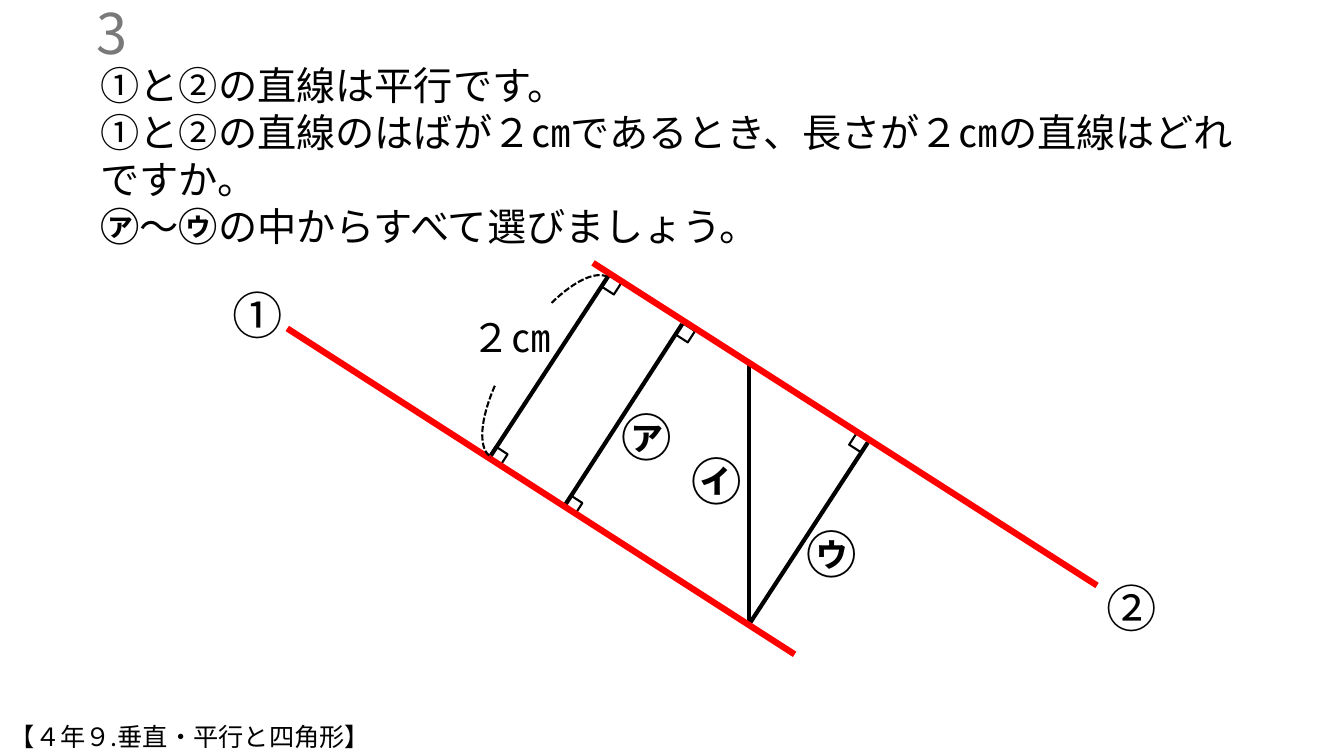
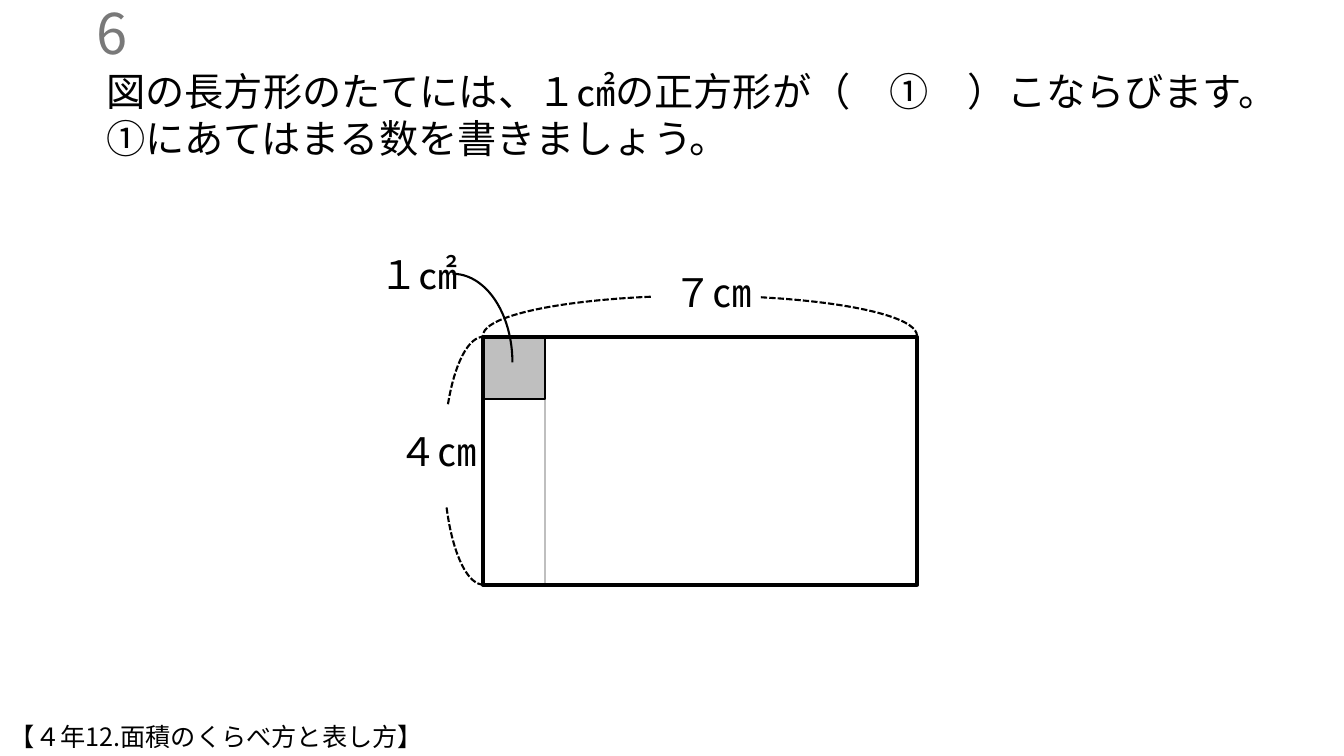
from itertools import groupby
from math import cos, radians, sin

from lxml import etree
from pptx import Presentation
from pptx.dml.color import RGBColor
from pptx.enum.dml import MSO_LINE
from pptx.enum.shapes import MSO_CONNECTOR, MSO_SHAPE
from pptx.enum.text import MSO_ANCHOR, PP_ALIGN
from pptx.oxml.ns import qn
from pptx.util import Inches, Pt

COLUMNS, ROWS = 160, 90
POINTS_PER_CELL = 6


def color(hex_text):
    return RGBColor.from_string(hex_text)


class Worksheet:
    """Draws on the current slide; lengths are cells of a 160 by 90 grid."""

    FONT = "Noto Sans CJK JP"
    BLACK, GRAY, RED, WHITE = "000000", "797979", "FF0000", "FFFFFF"
    LIGHT_GRAY = "BFBFBF"
    THIN, MEDIUM, THICK = 1.5, 3, 4.5
    BOLD_LETTERS = "㋐㋑㋒"
    LINE_HEIGHT = 1.2

    def __init__(self):
        self.presentation = Presentation()
        self.presentation.slide_width = Inches(13.33)
        self.presentation.slide_height = Inches(7.5)
        self.slide = None

    def column(self, count):
        return round(self.presentation.slide_width * count / COLUMNS)

    def row(self, count):
        return round(self.presentation.slide_height * count / ROWS)

    def box(self, left, top, width, height):
        return self.column(left), self.row(top), self.column(width), self.row(height)

    def new_slide(self, number, unit):
        self.slide = self.presentation.slides.add_slide(self.presentation.slide_layouts[6])
        self.text(number, 0, 1.2, 16.4, height=4.8, size=40, hex_text=self.GRAY,
                  align=PP_ALIGN.RIGHT, anchor=MSO_ANCHOR.MIDDLE)
        self.text(unit, 0, 85.15, 90, height=4.8, size=18)

    def text(self, text, left, top, width, height=7, size=28, hex_text=BLACK,
             align=PP_ALIGN.LEFT, anchor=MSO_ANCHOR.TOP):
        shape = self.slide.shapes.add_textbox(*self.box(left, top, width, height))
        frame = shape.text_frame
        frame.word_wrap = True
        frame.vertical_anchor = anchor
        frame.margin_top = Inches(0.05) + Pt(size * 0.06)
        for index, line in enumerate(text.split("\n")):
            paragraph = frame.paragraphs[0] if index == 0 else frame.add_paragraph()
            paragraph.alignment = align
            paragraph.line_spacing = Pt(size * self.LINE_HEIGHT)
            for bold, letters in groupby(line, key=lambda letter: letter in self.BOLD_LETTERS):
                run = paragraph.add_run()
                run.text = "".join(letters)
                run.font.size = Pt(size)
                run.font.bold = bold
                run.font.color.rgb = color(hex_text)
                run.font.name = self.FONT
                properties = run.font._element
                etree.SubElement(properties, qn("a:ea"), typeface=self.FONT)

    def question(self, text, left, top, width, height):
        self.text(text, left, top, width, height=height)

    def mark(self, letter, left, top):
        """Add a large circled number or letter."""
        self.text(letter, left, top, 8, height=8.5, size=36)

    def measure(self, text, left, top):
        self.text(text, left, top, 14.2)

    def line(self, start, end, hex_text=BLACK, weight=MEDIUM):
        connector = self.slide.shapes.add_connector(
            MSO_CONNECTOR.STRAIGHT, self.column(start[0]), self.row(start[1]),
            self.column(end[0]), self.row(end[1]))
        connector.line.color.rgb = color(hex_text)
        connector.line.width = Pt(weight)
        etree.SubElement(connector._element.spPr, qn("a:effectLst"))

    def shape(self, kind, left, top, width, height, fill=None, weight=THIN, rotation=0):
        shape = self.slide.shapes.add_shape(kind, *self.box(left, top, width, height))
        shape.shadow.inherit = False
        shape.rotation = rotation
        shape.line.color.rgb = color(self.BLACK)
        shape.line.width = Pt(weight)
        if fill:
            shape.fill.solid()
            shape.fill.fore_color.rgb = color(fill)
        else:
            shape.fill.background()
        return shape

    def rectangle(self, left, top, width, height, **style):
        self.shape(MSO_SHAPE.RECTANGLE, left, top, width, height, **style)

    def arc(self, left, top, width, height, **style):
        return self.shape(MSO_SHAPE.ARC, left, top, width, height, **style)

    def dimension(self, left, top, width, height, rotation=0):
        """Add two dashed arcs that leave a gap for a measure."""
        for start_angle, mirrored in ((196.71, False), (193, True)):
            arc = self.arc(left, top, width, height, rotation=rotation)
            arc.adjustments[0] = start_angle
            arc.adjustments[1] = 0
            arc.line.dash_style = MSO_LINE.SQUARE_DOT
            if mirrored:
                arc._element.spPr.get_or_add_xfrm().set("flipH", "1")

    def right_angle(self, foot, along, across, tilt=32.9):
        """Add a small square beside a foot, offset along and across the tilted line."""
        width, height = 1.7, 1.6
        cosine, sine = cos(radians(tilt)), sin(radians(tilt))
        center_x = foot[0] + along * cosine - across * sine
        center_y = foot[1] + along * sine + across * cosine
        self.rectangle(center_x - width / 2, center_y - height / 2, width, height,
                       fill=self.WHITE, rotation=tilt)


def add_parallel_lines(sheet):
    sheet.new_slide("3", "【４年９.垂直・平行と四角形】")
    sheet.question("①と②の直線は平行です。\n"
                   "①と②の直線のはばが２㎝であるとき、長さが２㎝の直線はどれですか。\n"
                   "㋐～㋒の中からすべて選びましょう。", 10.8, 6.4, 138.4, 23.9)

    width_line = (58.2, 54.6), (72.4, 32.9)
    line_a = (67.1, 60.4), (81.2, 38.6)
    line_i = (89.2, 74.3), (89.2, 43.4)
    line_u = (89.2, 74.3), (103.3, 52.7)
    for lower, upper in (width_line, line_a):
        sheet.right_angle(lower, 0.75, -0.85)
        sheet.right_angle(upper, 0.9, 0.65)
    sheet.right_angle(line_u[1], -0.87, 0.6)
    for lower, upper in (width_line, line_a, line_i, line_u):
        sheet.line(lower, upper)
    for start, end in (((34.2, 39.1), (94.6, 77.9)), ((70.6, 31.3), (130.6, 69.7))):
        sheet.line(start, end, hex_text=sheet.RED, weight=sheet.THICK)

    sheet.dimension(52.7, 39, 25.6, 9.5, rotation=303.4)
    sheet.measure("２㎝", 55, 36.4)
    for letter, left, top in (("①", 26.5, 32.9), ("②", 130.6, 67.8), ("㋐", 72.8, 47.4),
                              ("㋑", 81.1, 52.6), ("㋒", 94.8, 61.3)):
        sheet.mark(letter, left, top)


def add_rectangle_area(sheet):
    sheet.new_slide("6", "【４年12.面積のくらべ方と表し方】")
    sheet.question("図の長方形のたてには、１㎠の正方形が（　①　）こならびます。\n"
                   "①にあてはまる数を書きましょう。", 11.5, 7.1, 144.5, 12.5)

    left, top, unit = 57.5, 40.1, 7.38
    width, height = 7 * unit, 4 * unit
    sheet.line((left + unit, top), (left + unit, top + height),
               hex_text=sheet.LIGHT_GRAY, weight=sheet.THIN)
    sheet.rectangle(left, top, unit, unit, fill=sheet.LIGHT_GRAY)
    sheet.rectangle(left, top, width, height, weight=sheet.MEDIUM)

    sheet.dimension(left, 35.2, width, 9.5)
    sheet.dimension(42.8, 50.1, height, 9.5, rotation=270)
    sheet.arc(46.8, 32.6, 14.2, 21.1)
    for text, text_left, text_top in (("７㎝", 79, 31.1), ("４㎝", 46.2, 50), ("１㎠", 44, 28.9)):
        sheet.measure(text, text_left, text_top)


def main():
    sheet = Worksheet()
    add_parallel_lines(sheet)
    add_rectangle_area(sheet)
    sheet.presentation.save("out.pptx")


if __name__ == "__main__":
    main()
